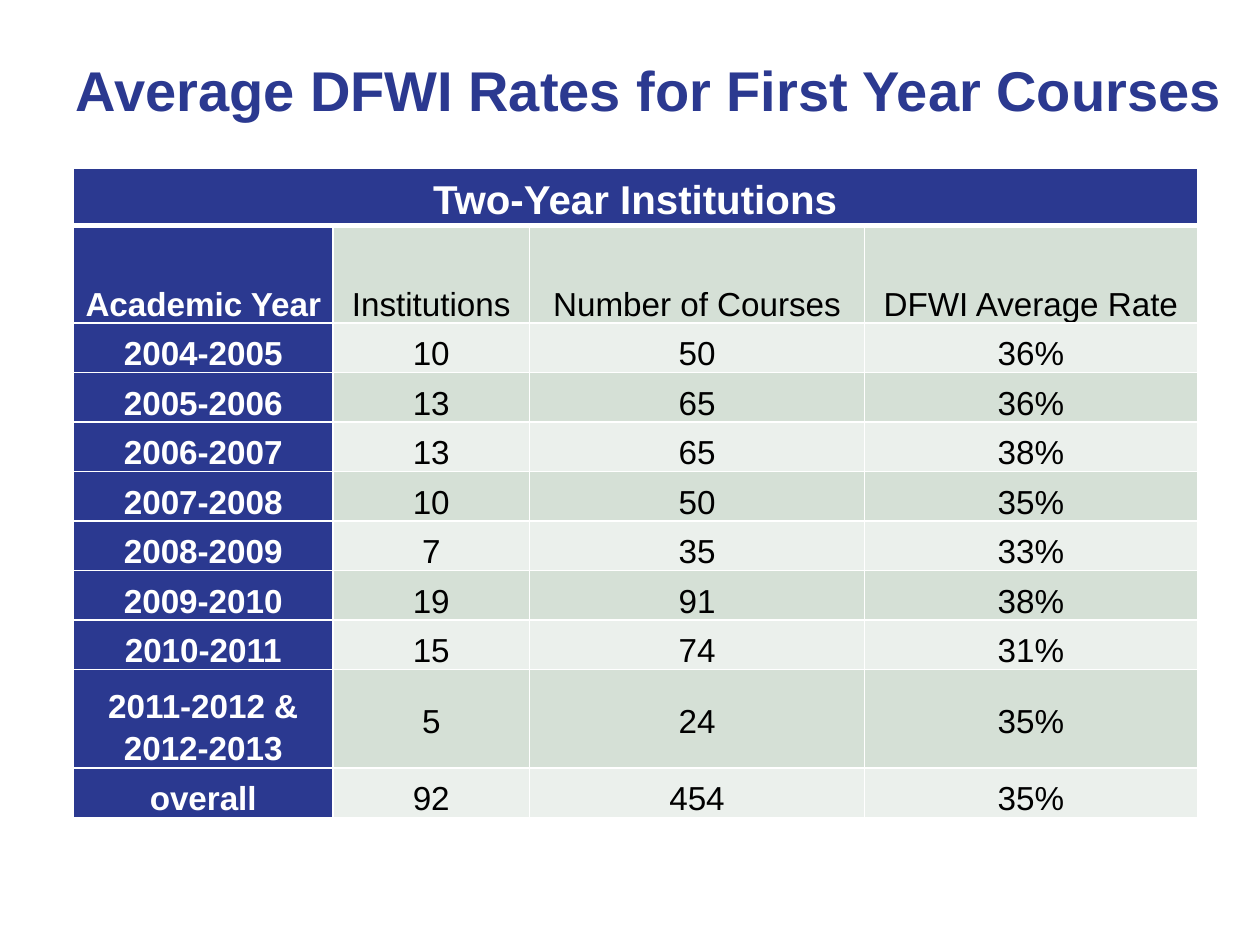
from dataclasses import dataclass

from lxml.etree import SubElement
from pptx import Presentation
from pptx.dml.color import RGBColor
from pptx.enum.text import MSO_ANCHOR as Anchor, MSO_AUTO_SIZE as Fit, PP_ALIGN as Align
from pptx.oxml.ns import qn
from pptx.slide import Slide
from pptx.table import Table, _Cell as Cell
from pptx.text.text import Font
from pptx.util import Pt

NAVY, WHITE, BLACK = "2B3990", "FFFFFF", "000000"
DARK, LIGHT = "D5E0D6", "EBF0EC"
WIDTHS = [148.3, 112.3, 191.5, 190.1]
TOP, HEAD, BODY, TALL = 33, 55.6, 28.3, 56.1


@dataclass
class Row:
    label: str
    values: list[str]
    height: float = BODY
    anchor: Anchor = Anchor.BOTTOM


@dataclass
class Look:
    fill: str
    color: str = BLACK
    size: float = 19
    bold: bool = False
    anchor: Anchor = Anchor.BOTTOM
    side: float = 4.5
    top: float = 0.5
    below: float = 1
    above: float = 1


ROWS = [
    Row("Academic Year", ["Institutions", "Number of Courses", "DFWI Average Rate"], HEAD),
    Row("2004-2005", ["10", "50", "36%"]),
    Row("2005-2006", ["13", "65", "36%"]),
    Row("2006-2007", ["13", "65", "38%"]),
    Row("2007-2008", ["10", "50", "35%"]),
    Row("2008-2009", ["7", "35", "33%"]),
    Row("2009-2010", ["19", "91", "38%"]),
    Row("2010-2011", ["15", "74", "31%"]),
    Row("2011-2012 &\n2012-2013", ["5", "24", "35%"], TALL, Anchor.MIDDLE),
    Row("overall", ["92", "454", "35%"]),
]


def paint(text: str) -> RGBColor:
    return RGBColor.from_string(text)


def style(font: Font, size: float, color: str, bold: bool) -> None:
    font.name = "Arial"
    font.size = Pt(size)
    font.bold = bold
    font.color.rgb = paint(color)


def edge(cell: Cell, look: Look) -> None:
    props = cell._tc.get_or_add_tcPr()
    lines = {"lnL": 1, "lnR": 1, "lnT": look.above, "lnB": look.below}
    for spot, (tag, width) in enumerate(lines.items()):
        line = SubElement(props, qn(f"a:{tag}"), w=str(Pt(width)))
        fill = SubElement(line, qn("a:solidFill"))
        SubElement(fill, qn("a:srgbClr"), val=WHITE)
        props.insert(spot, line)


def write(cell: Cell, text: str, look: Look) -> None:
    cell.fill.solid()
    cell.fill.fore_color.rgb = paint(look.fill)
    cell.vertical_anchor = look.anchor
    cell.margin_left = cell.margin_right = Pt(look.side)
    cell.margin_top, cell.margin_bottom = Pt(look.top), Pt(0)
    cell.text_frame.text = text
    for para in cell.text_frame.paragraphs:
        para.alignment = Align.CENTER
        para.line_spacing = 1.15
        for run in para.runs:
            style(run.font, look.size, look.color, look.bold)
    edge(cell, look)


def fill_row(table: Table, place: int, row: Row) -> None:
    table.rows[place].height = Pt(row.height)
    first = place == 1
    above = 3 if first else 1
    write(table.cell(place, 0), row.label,
          Look(NAVY, WHITE, bold=True, side=5, top=0, above=above))
    look = Look(DARK if place % 2 else LIGHT, anchor=row.anchor, above=above,
                side=5 if first else 4.5, top=0 if first else 0.5)
    for col, value in enumerate(row.values, 1):
        write(table.cell(place, col), value, look)


def add_title(slide: Slide, text: str) -> None:
    title = slide.shapes.title
    title.left, title.top, title.width, title.height = Pt(36), Pt(12), Pt(684), Pt(78)
    frame = title.text_frame
    frame.text = text
    frame.word_wrap = True
    frame.auto_size = Fit.NONE
    frame.vertical_anchor = Anchor.MIDDLE
    para = frame.paragraphs[0]
    para.alignment = Align.LEFT
    style(para.runs[0].font, 32, NAVY, True)


def add_rates(slide: Slide) -> None:
    high = TOP + sum(row.height for row in ROWS)
    table = slide.shapes.add_table(len(ROWS) + 1, len(WIDTHS), Pt(42), Pt(96),
                                   Pt(sum(WIDTHS)), Pt(high)).table
    for col, width in zip(table.columns, WIDTHS):
        col.width = Pt(width)
    table.rows[0].height = Pt(TOP)
    banner = Look(NAVY, WHITE, 23, True, Anchor.MIDDLE, side=5, top=0, below=3)
    for col in range(len(WIDTHS)):
        write(table.cell(0, col), "" if col else "Two-Year Institutions", banner)
    table.cell(0, 0).merge(table.cell(0, len(WIDTHS) - 1))
    for place, row in enumerate(ROWS, 1):
        fill_row(table, place, row)


def main() -> None:
    deck = Presentation()
    deck.slide_width, deck.slide_height = Pt(720), Pt(540)
    slide = deck.slides.add_slide(deck.slide_layouts[5])
    add_rates(slide)
    add_title(slide, "Average DFWI Rates for First Year Courses")
    deck.save("out.pptx")


if __name__ == "__main__":
    main()
